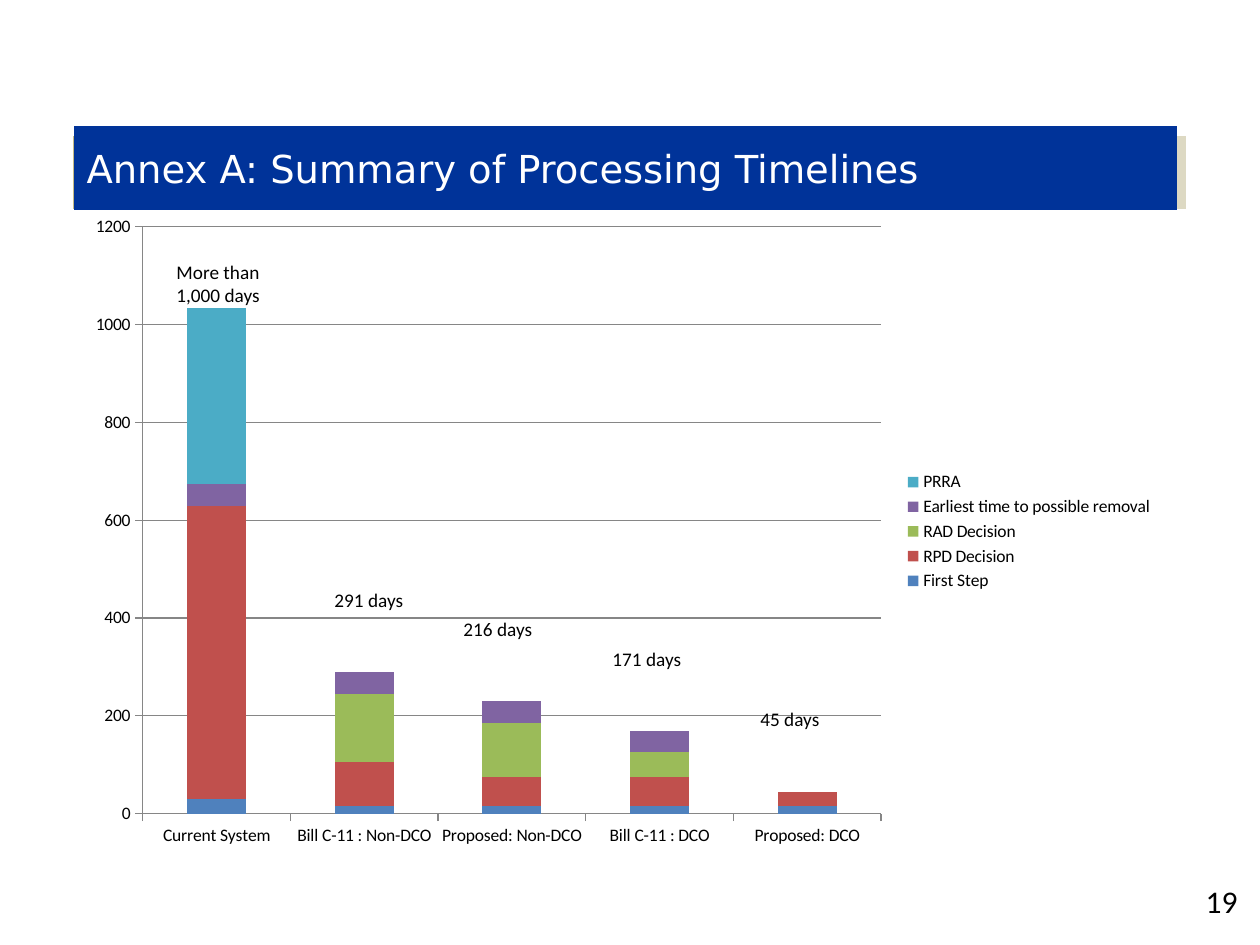
from lxml.etree import SubElement
from pptx import Presentation
from pptx.chart.data import CategoryChartData
from pptx.dml.color import RGBColor
from pptx.enum.chart import XL_CHART_TYPE, XL_LEGEND_POSITION, XL_TICK_MARK
from pptx.enum.shapes import MSO_SHAPE
from pptx.enum.text import MSO_ANCHOR, MSO_AUTO_SIZE, PP_ALIGN
from pptx.oxml.ns import qn
from pptx.util import Pt

PX = 914400 / 126
BODY, HEAD = "Calibri", "DejaVu Sans"
BLACK, GREY = "000000", "868686"

CATEGORIES = ["Current System", "Bill C-11 : Non-DCO", "Proposed: Non-DCO",
              "Bill C-11 : DCO", "Proposed: DCO"]
STEPS = [
    ("First Step", (30, 15, 15, 15, 15), "4F81BD"),
    ("RPD Decision", (600, 90, 60, 60, 30), "C0504D"),
    ("RAD Decision", (0, 140, 110, 50, 0), "9BBB59"),
    ("Earliest time to possible removal", (45, 45, 45, 45, 0), "8064A2"),
    ("PRRA", (360, 0, 0, 0, 0), "4BACC6"),
]
# Total above each column: text, then box relative to the chart
TOTALS = [
    ("More than 1,000 days", (90, 50, 128, 59)),
    ("291 days", (248, 378, 100, 49)),
    ("216 days", (377, 407, 110, 40)),
    ("171 days", (526, 437, 110, 40)),
    ("45 days", (674, 497, 100, 40)),
]


def px(*lengths):
    return [round(n * PX) for n in lengths]


def rgb(color):
    return RGBColor.from_string(color)


def style(font, size, color=BLACK, name=BODY):
    font.size, font.name, font.bold = Pt(size), name, False
    font.color.rgb = rgb(color)


def add_text(s, box, text, size, align=PP_ALIGN.LEFT, anchor=MSO_ANCHOR.TOP):
    tf = s.shapes.add_textbox(*px(*box)).text_frame
    tf.word_wrap = True
    tf.vertical_anchor = anchor
    p = tf.paragraphs[0]
    p.alignment = align
    r = p.add_run()
    r.text = text
    style(r.font, size)


def add_title(s, x, y, w, h):
    """Title band with a beige bar showing behind its right edge."""
    bar = s.shapes.add_shape(MSO_SHAPE.RECTANGLE, *px(x - 1, y + 10, w + 10, h - 11))
    bar.shadow.inherit = False
    bar.line.fill.background()
    bar.fill.gradient()
    bar.fill.gradient_angle = 0
    for stop, color in zip(bar.fill.gradient_stops, ("C4BB86", "DDD9C3")):
        stop.color.rgb = rgb(color)

    title = s.shapes.title
    title.left, title.top, title.width, title.height = px(x, y, w, h)
    title.fill.solid()
    title.fill.fore_color.rgb = rgb("003399")
    s.shapes._spTree.append(title._element)  # bring in front of the bar
    tf = title.text_frame
    tf.auto_size = MSO_AUTO_SIZE.NONE
    tf.vertical_anchor = MSO_ANCHOR.MIDDLE
    p = tf.paragraphs[0]
    p.alignment = PP_ALIGN.LEFT
    r = p.add_run()
    r.text = "Annex A: Summary of Processing Timelines"
    style(r.font, 22, "FFFFFF", HEAD)


def set_plot_area(chart, **fractions):
    """Fix the inner plot area as fractions of the chart."""
    area = chart._chartSpace.chart.plotArea
    for old in area.findall(qn("c:layout")):
        area.remove(old)
    layout = SubElement(area, qn("c:layout"))
    area.insert(0, layout)
    manual = SubElement(layout, qn("c:manualLayout"))
    settings = {"layoutTarget": "inner", "xMode": "edge", "yMode": "edge", **fractions}
    for tag, value in settings.items():
        SubElement(manual, qn(f"c:{tag}")).set("val", str(value))


def format_line(line):
    line.color.rgb = rgb(GREY)
    line.width = Pt(0.75)


def add_timeline_chart(s, x, y, w, h):
    data = CategoryChartData()
    data.categories = CATEGORIES
    for name, days, _ in STEPS:
        data.add_series(name, days)
    chart = s.shapes.add_chart(XL_CHART_TYPE.COLUMN_STACKED, *px(x, y, w, h), data).chart
    chart.has_title = False
    style(chart.font, 10)
    set_plot_area(chart, x=0.063, y=0.035, w=0.676, h=0.896)

    plot = chart.plots[0]
    plot.gap_width, plot.overlap = 150, 100
    plot.vary_by_categories = False
    for series, (_, _, color) in zip(plot.series, STEPS):
        series.format.fill.solid()
        series.format.fill.fore_color.rgb = rgb(color)

    for axis in (chart.category_axis, chart.value_axis):
        axis.major_tick_mark = XL_TICK_MARK.OUTSIDE
        axis.minor_tick_mark = XL_TICK_MARK.NONE
        style(axis.tick_labels.font, 10)
        format_line(axis.format.line)
    axis = chart.value_axis
    axis.minimum_scale, axis.maximum_scale, axis.major_unit = 0, 1200, 200
    axis.has_major_gridlines = True
    format_line(axis.major_gridlines.format.line)

    chart.has_legend = True
    chart.legend.position = XL_LEGEND_POSITION.RIGHT
    chart.legend.include_in_layout = False
    style(chart.legend.font, 10)

    for text, (dx, dy, tw, th) in TOTALS:
        add_text(s, (x + dx, y + dy, tw, th), text, 11)


def main():
    prs = Presentation()
    prs.slide_width, prs.slide_height = px(1260, 945)
    s = prs.slides.add_slide(prs.slide_layouts[5])
    add_title(s, 74, 126, 1103, 84)
    add_text(s, (1134, 876, 116, 50), "19", 18, PP_ALIGN.RIGHT, MSO_ANCHOR.MIDDLE)
    add_timeline_chart(s, 74, 204, 1092, 655)
    prs.save("out.pptx")


if __name__ == "__main__":
    main()
